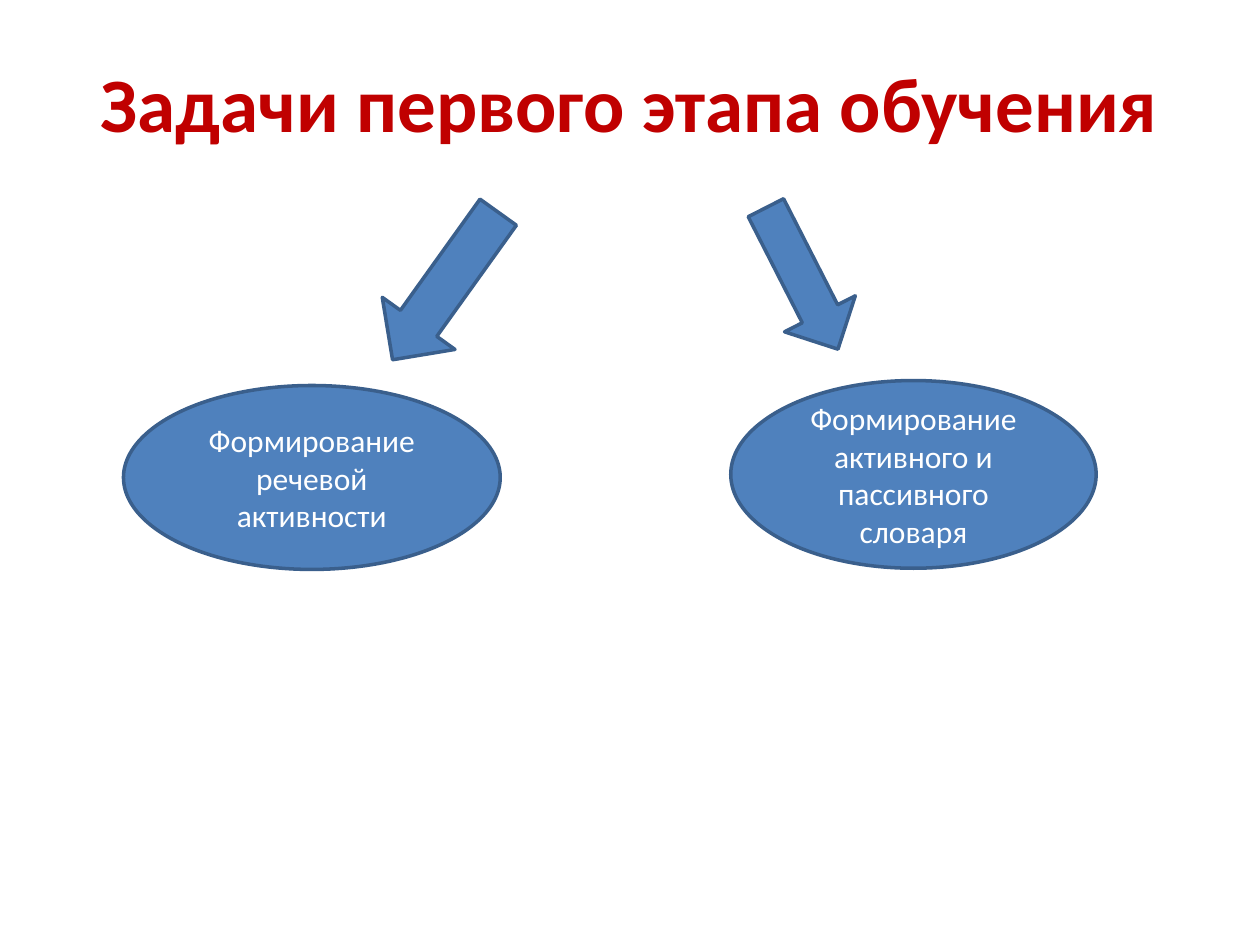
import pptx
import pptx.util
import pptx.dml.color
import pptx.enum.shapes
import pptx.enum.text
from dataclasses import dataclass

Inches = pptx.util.Inches
SHAPES = pptx.enum.shapes.MSO_SHAPE


@dataclass(frozen=True)
class Theme:
    font: str = "Calibri"
    title_color: str = "C00000"
    fill: str = "4F81BD"
    line: str = "3A5F8C"
    text: str = "FFFFFF"
    title_size: int = 44
    body_size: int = 18
    line_width: int = 2


THEME = Theme()

# Content: places are left, top, width, height in inches
TITLE = ("Задачи первого этапа обучения", (0.5, 0.3, 9, 1.01))
GOALS = [
    ("Формирование речевой активности", (0.98, 3.06, 2.99, 1.46)),
    ("Формирование активного и пассивного словаря", (5.8, 3.02, 2.9, 1.49)),
]
ARROWS = [
    ((3.18, 1.55, 0.71, 1.44), 35.6),
    ((6.05, 1.58, 0.63, 1.26), 333),
]


def color(code):
    return pptx.dml.color.RGBColor.from_string(code)


def write(shape, text, size, text_color, bold=False):
    frame = shape.text_frame
    frame.text = text
    frame.word_wrap = True
    frame.vertical_anchor = pptx.enum.text.MSO_ANCHOR.MIDDLE
    para = frame.paragraphs[0]
    para.alignment = pptx.enum.text.PP_ALIGN.CENTER
    font = para.runs[0].font
    font.name = THEME.font
    font.size = pptx.util.Pt(size)
    font.bold = bold
    font.color.rgb = color(text_color)


def add_figure(slide, kind, place):
    shape = slide.shapes.add_shape(kind, *map(Inches, place))
    shape.shadow.inherit = False
    shape.fill.solid()
    shape.fill.fore_color.rgb = color(THEME.fill)
    shape.line.color.rgb = color(THEME.line)
    shape.line.width = pptx.util.Pt(THEME.line_width)
    return shape


def main():
    deck = pptx.Presentation()
    deck.slide_width, deck.slide_height = Inches(10), Inches(7.5)
    slide = deck.slides.add_slide(deck.slide_layouts[6])

    # Title
    text, place = TITLE
    box = slide.shapes.add_textbox(*map(Inches, place))
    write(box, text, THEME.title_size, THEME.title_color, bold=True)

    # Goals
    for text, place in GOALS:
        goal = add_figure(slide, SHAPES.OVAL, place)
        write(goal, text, THEME.body_size, THEME.text)

    # Arrows from the title to the goals
    for place, angle in ARROWS:
        add_figure(slide, SHAPES.DOWN_ARROW, place).rotation = angle

    deck.save("out.pptx")


if __name__ == "__main__":
    main()
